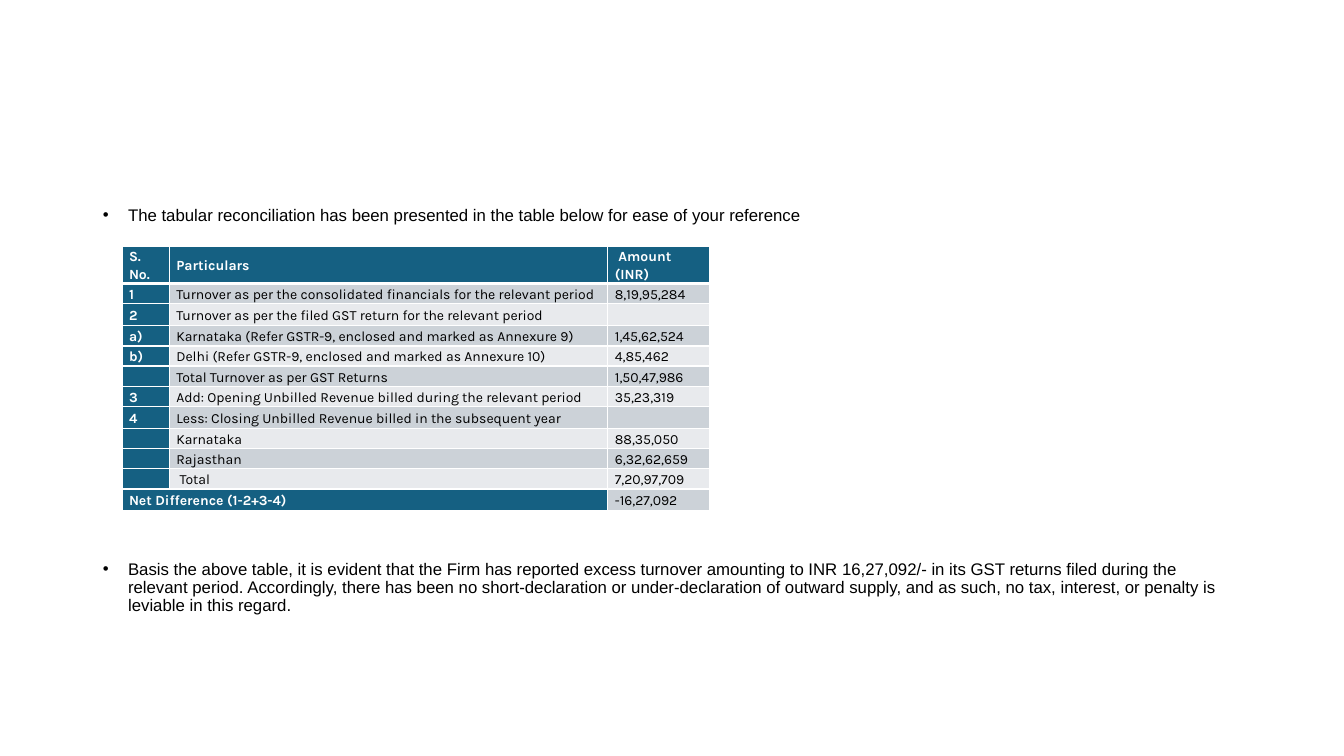
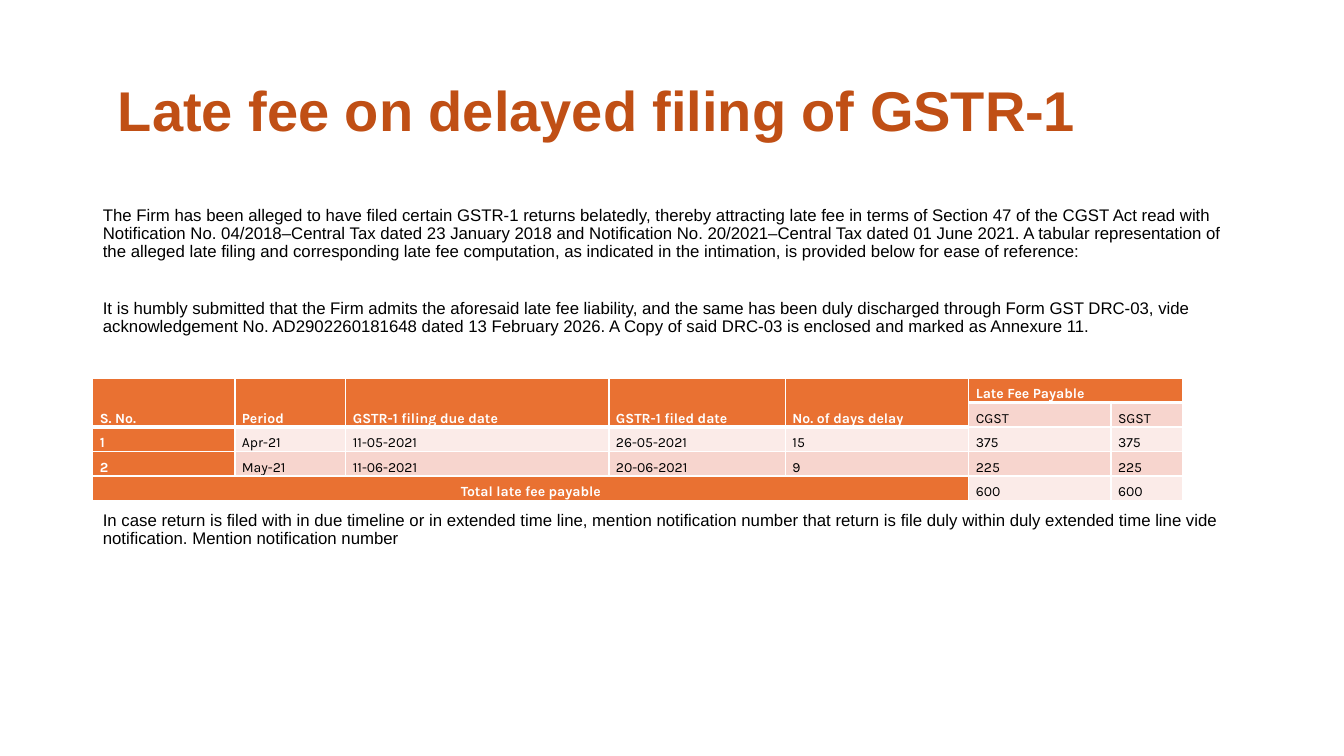
"""Build two slides on GST turnover and late fees."""
from lxml import etree
from pptx import Presentation, util as u
from pptx.dml.color import RGBColor
from pptx.enum import text as t
from pptx.oxml.ns import qn

WHITE, BLACK, RUST = "FFFFFF", "000000", "C04F15"
BODY = dict(name="Arial", size=u.Pt(12), bold=False)
HEAD = dict(name="Arial", size=u.Pt(40), bold=True)
CELL = dict(name="Karla", size=u.Pt(10))
PLACES = {0: (0.92, 0.4, 11.5, 1.45), 1: (0.92, 2, 11.5, 4.76)}

SLIDES = [
    dict(
        title=None, bullet=True,
        body=[
            (0, "The tabular reconciliation has been presented in the table below for ease of your reference"),
            (240, "Basis the above table, it is evident that the Firm has reported excess turnover amounting to INR 16,27,092/- in its GST returns filed during the relevant period. Accordingly, there has been no short‑declaration or under‑declaration of outward supply, and as such, no tax, interest, or penalty is leviable in this regard."),
        ],
        table=dict(
            at=(1.21, 2.44), cols=[0.47, 4.35, 1.01],
            rows=[0.36, 0.2, 0.22, 0.2, 0.2, 0.2, 0.2, 0.22, 0.2, 0.2, 0.2, 0.21],
            fills=("156082", "E8EAED", "CCD2D8"), anchor="MIDDLE", space=1.15,
            spans=[(11, 0, 11, 1)], centre=[],
            cells=[
                ("S. No.", "Particulars", " Amount (INR)"),
                ("1", "Turnover as per the consolidated financials for the relevant period", "8,19,95,284"),
                ("2", "Turnover as per the filed GST return for the relevant period", ""),
                ("a)", "Karnataka (Refer GSTR-9, enclosed and marked as Annexure 9)", "1,45,62,524"),
                ("b)", "Delhi (Refer GSTR-9, enclosed and marked as Annexure 10)", "4,85,462"),
                ("", "Total Turnover as per GST Returns", "1,50,47,986"),
                ("3", "Add: Opening Unbilled Revenue billed during the relevant period", "35,23,319"),
                ("4", "Less: Closing Unbilled Revenue billed in the subsequent year", ""),
                ("", "Karnataka", "88,35,050"),
                ("", "Rajasthan", "6,32,62,659"),
                ("", " Total", "7,20,97,709"),
                ("Net Difference (1-2+3-4)", "", "-16,27,092"),
            ],
        ),
    ),
    dict(
        title="Late fee on delayed filing of GSTR-1", bullet=False,
        body=[
            (0, "The Firm has been alleged to have filed certain GSTR‑1 returns belatedly, thereby attracting late fee in terms of Section 47 of the CGST Act read with Notification No. 04/2018–Central Tax dated 23 January 2018 and Notification No. 20/2021–Central Tax dated 01 June 2021. A tabular representation of the alleged late filing and corresponding late fee computation, as indicated in the intimation, is provided below for ease of reference:"),
            (28, "It is humbly submitted that the Firm admits the aforesaid late fee liability, and the same has been duly discharged through Form GST DRC‑03, vide acknowledgement No. AD2902260181648 dated 13 February 2026. A Copy of said DRC-03 is enclosed and marked as Annexure 11."),
            (125, "In case return is filed with in due timeline or in extended time line, mention notification number that return is file duly within duly extended time line vide notification. Mention notification number"),
        ],
        table=dict(
            at=(0.92, 3.75), cols=[1.41, 1.1, 2.61, 1.75, 1.82, 1.41, 0.71],
            rows=[0.24] * 5,
            fills=("E97132", "FBEBE8", "F7D5CE"), anchor="BOTTOM", space=1.5,
            spans=[(0, c, 1, c) for c in range(5)] + [(0, 5, 0, 6), (4, 0, 4, 4)],
            centre=[(4, 0)],
            cells=[
                ("S. No.", "Period", "GSTR-1 filing due date", "GSTR-1 filed date", "No. of days delay", "Late Fee Payable", ""),
                ("", "", "", "", "", "CGST", "SGST"),
                ("1", "Apr-21", "11-05-2021", "26-05-2021", "15", "375", "375"),
                ("2", "May-21", "11-06-2021", "20-06-2021", "9", "225", "225"),
                ("Total late fee payable", "", "", "", "", "600", "600"),
            ],
        ),
    ),
]


def style(font, form, color):
    for key, val in form.items():
        setattr(font, key, val)
    font.color.rgb = RGBColor.from_string(color)


def edge(cell, thick):
    props = cell._tc.get_or_add_tcPr()
    for pos, side in enumerate("LRTB"):
        width = u.Pt(3 if thick and side == "B" else 1)
        line = etree.Element(qn("a:ln" + side), w=str(width))
        fill = etree.SubElement(line, qn("a:solidFill"))
        etree.SubElement(fill, qn("a:srgbClr"), val=WHITE)
        props.insert(pos, line)


def write_title(shape, words):
    frame = shape.text_frame
    frame.text = words
    frame.auto_size = t.MSO_AUTO_SIZE.NONE
    frame.vertical_anchor = t.MSO_ANCHOR.MIDDLE
    frame.margin_left = u.Inches(0.25)
    para = frame.paragraphs[0]
    para.alignment, para.line_spacing = t.PP_ALIGN.LEFT, 0.9
    style(para.runs[0].font, HEAD, RUST)


def write_body(shape, items, bullet):
    frame = shape.text_frame
    frame.auto_size = t.MSO_AUTO_SIZE.NONE
    frame.text = "\n".join(words for _, words in items)
    dent = u.Inches(0.25) if bullet else 0
    for para, (gap, _) in zip(frame.paragraphs, items):
        props = para._p.get_or_add_pPr()
        props.set("marL", str(dent))
        props.set("indent", str(-dent))
        if bullet:
            etree.SubElement(props, qn("a:buChar"), char="•")
        else:
            etree.SubElement(props, qn("a:buNone"))
        para.line_spacing, para.space_before = 0.9, u.Pt(gap)
        style(para.runs[0].font, BODY, BLACK)


def draw_table(slide, data):
    cols, rows = data["cols"], data["rows"]
    box = (*data["at"], sum(cols), sum(rows))
    table = slide.shapes.add_table(len(rows), len(cols), *map(u.Inches, box)).table
    for col, width in zip(table.columns, cols):
        col.width = u.Inches(width)
    for row, height in zip(table.rows, rows):
        row.height = u.Inches(height)
    for r, c, end, last in data["spans"]:
        table.cell(r, c).merge(table.cell(end, last))
    for r, line in enumerate(data["cells"]):
        for c, words in enumerate(line):
            cell = table.cell(r, c)
            key = r == 0 or c == 0 or cell.is_spanned
            cell.fill.solid()
            cell.fill.fore_color.rgb = RGBColor.from_string(data["fills"][0 if key else 1 + r % 2])
            edge(cell, r == 0 or cell.is_spanned)
            cell.margin_left = cell.margin_right = u.Inches(0.07)
            cell.margin_top = cell.margin_bottom = 0
            cell.vertical_anchor = t.MSO_ANCHOR[data["anchor"]]
            para = cell.text_frame.paragraphs[0]
            para.line_spacing, para.space_after = data["space"], u.Pt(8)
            if (r, c) in data["centre"]:
                para.alignment = t.PP_ALIGN.CENTER
            if words:
                para.text = words
                font = para.runs[0].font
            else:
                font = para.font
                etree.SubElement(para._p, qn("a:endParaRPr"), sz="1000")
            style(font, dict(CELL, bold=key), WHITE if key else BLACK)


def main():
    deck = Presentation()
    deck.slide_width, deck.slide_height = u.Inches(13.33), u.Inches(7.5)
    layout = deck.slide_layouts[1]
    for hold in layout.placeholders:
        place = PLACES.get(hold.placeholder_format.idx)
        if place:
            hold.left, hold.top, hold.width, hold.height = map(u.Inches, place)
    for data in SLIDES:
        slide = deck.slides.add_slide(layout)
        title = slide.shapes.title
        if data["title"]:
            write_title(title, data["title"])
        else:
            title.element.getparent().remove(title.element)
        write_body(slide.placeholders[1], data["body"], data["bullet"])
        draw_table(slide, data["table"])
    deck.save("out.pptx")


if __name__ == "__main__":
    main()
